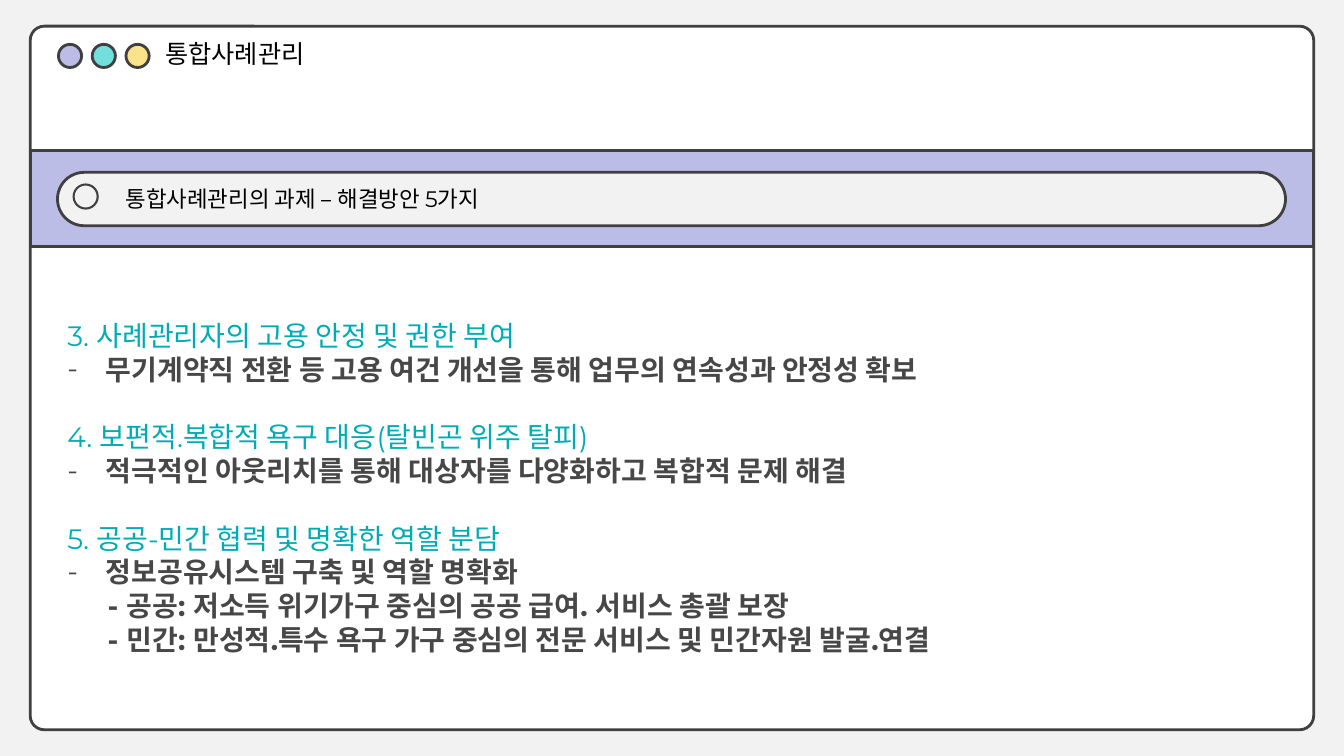
"""Build a browser-window slide about solutions for integrated case management."""

from dataclasses import dataclass
from typing import Any

import lxml.etree
import pptx
import pptx.dml.color
import pptx.enum.shapes
import pptx.enum.text
import pptx.oxml.ns
import pptx.util

Inches = pptx.util.Inches
Pt = pptx.util.Pt
Preset = pptx.enum.shapes.MSO_SHAPE

FONT = "Montserrat"
COLOURS = {
    "background": "F2F2F2",
    "window": "FFFFFF",
    "outline": "404040",
    "lavender": "BCBDE6",
    "turquoise": "73DFDC",
    "yellow": "FCE38A",
    "black": "000000",
    "heading": "00ACB4",
    "detail": "474747",
}


@dataclass(frozen=True)
class Box:
    """Position and size in inches."""

    left: float
    top: float
    width: float
    height: float

    def lengths(self) -> tuple[int, ...]:
        """Return the four values as lengths."""
        return tuple(Inches(v) for v in (self.left, self.top, self.width, self.height))


@dataclass(frozen=True)
class Panel:
    """A filled preset shape with an outline."""

    preset: Any
    box: Box
    fill: str
    corner: float | None = None
    outlined: bool = True


@dataclass(frozen=True)
class Style:
    """Look of one kind of body paragraph."""

    colour: str
    bold: bool
    margin: float = 0
    bullet: bool = False


HEADING = Style("heading", False)
POINT = Style("detail", True, 0.38, True)
SUBPOINT = Style("detail", True, 0.4)

WINDOW_PANELS = [
    Panel(Preset.ROUNDED_RECTANGLE, Box(0.3, 0.26, 12.73, 6.98), "window", 0.02),
    Panel(Preset.RECTANGLE, Box(0.3, 1.49, 12.73, 0.96), "lavender"),
    Panel(Preset.ROUNDED_RECTANGLE, Box(0.57, 1.71, 12.18, 0.53), "background", 0.5),
]
WINDOW_BUTTONS = [
    Panel(Preset.OVAL, Box(0.58 + 0.335 * index, 0.44, 0.23, 0.23), fill)
    for index, fill in enumerate(("lavender", "turquoise", "yellow"))
]
LENS = Panel(Preset.DONUT, Box(0.72, 1.82, 0.26, 0.26), "outline", 0.08, False)
HANDLE = [
    (1, 2.12), (0.97, 2.11), (0.93, 2.07), (0.93, 2.06), (0.94, 2.06),
    (0.99, 2.1), (1, 2.11), (1.01, 2.1), (1.01, 2.08), (0.97, 2.04),
    (0.97, 2.03), (0.98, 2.03), (1.02, 2.07), (1.03, 2.09), (1.02, 2.11),
]
SOLUTIONS = [
    (HEADING, "3. 사례관리자의 고용 안정 및 권한 부여"),
    (POINT, "무기계약직 전환 등 고용 여건 개선을 통해 업무의 연속성과 안정성 확보"),
    (HEADING, "4. 보편적.복합적 욕구 대응(탈빈곤 위주 탈피)"),
    (POINT, "적극적인 아웃리치를 통해 대상자를 다양화하고 복합적 문제 해결"),
    (HEADING, "5. 공공-민간 협력 및 명확한 역할 분담"),
    (POINT, "정보공유시스템 구축 및 역할 명확화"),
    (SUBPOINT, "- 공공: 저소득 위기가구 중심의 공공 급여. 서비스 총괄 보장"),
    (SUBPOINT, "- 민간: 만성적.특수 욕구 가구 중심의 전문 서비스 및 민간자원 발굴.연결"),
]


def colour(name: str) -> pptx.dml.color.RGBColor:
    """Look up a named colour."""
    return pptx.dml.color.RGBColor.from_string(COLOURS[name])


def paint(shape: Any, fill: str, outlined: bool) -> None:
    """Set fill, outline and shadow of a shape."""
    shape.shadow.inherit = False
    shape.fill.solid()
    shape.fill.fore_color.rgb = colour(fill)
    if outlined:
        shape.line.color.rgb = colour("outline")
        shape.line.width = Pt(2)
    else:
        shape.line.fill.background()


def draw_panel(shapes: Any, panel: Panel) -> None:
    """Add one panel to a shape collection."""
    shape = shapes.add_shape(panel.preset, *panel.box.lengths())
    if panel.corner is not None:
        shape.adjustments[0] = panel.corner
    paint(shape, panel.fill, panel.outlined)


def draw_magnifier(shapes: Any) -> None:
    """Add the search symbol."""
    draw_panel(shapes, LENS)
    builder = shapes.build_freeform(*HANDLE[0], scale=float(Inches(1)))
    builder.add_line_segments(HANDLE[1:], close=True)
    paint(builder.convert_to_shape(), "outline", False)


def format_runs(paragraph: Any, size: float, colour_name: str, bold: bool = False) -> None:
    """Format every run of a paragraph."""
    for run in paragraph.runs:
        run.font.name = FONT
        run.font.size = Pt(size)
        run.font.bold = bold
        run.font.color.rgb = colour(colour_name)


def prepare_frame(text_frame: Any) -> None:
    """Make a frame wrap from its top left corner."""
    text_frame.word_wrap = True
    text_frame.vertical_anchor = pptx.enum.text.MSO_ANCHOR.TOP
    text_frame.auto_size = pptx.enum.text.MSO_AUTO_SIZE.SHAPE_TO_FIT_TEXT


def write_line(shape: Any, text: str, size: float) -> None:
    """Write one black line of text into a shape."""
    prepare_frame(shape.text_frame)
    shape.text_frame.text = text
    paragraph = shape.text_frame.paragraphs[0]
    paragraph.alignment = pptx.enum.text.PP_ALIGN.LEFT
    paragraph.line_spacing = 1.0
    paragraph.space_before = Pt(0)
    format_runs(paragraph, size, "black")


def indent(paragraph: Any, style: Style) -> None:
    """Apply the margin and dash bullet of a style."""
    properties = paragraph._p.get_or_add_pPr()
    properties.set("marL", str(Inches(style.margin)))
    if style.bullet:
        properties.set("indent", str(-Inches(style.margin)))
        for tag, key, value in (("a:buFont", "typeface", FONT), ("a:buChar", "char", "-")):
            element = lxml.etree.SubElement(properties, pptx.oxml.ns.qn(tag))
            element.set(key, value)


def write_solutions(shape: Any) -> None:
    """Write the numbered solutions and their details."""
    frame = shape.text_frame
    prepare_frame(frame)
    frame.text = "\n".join(text for _, text in SOLUTIONS)
    for index, (paragraph, (style, _)) in enumerate(zip(frame.paragraphs, SOLUTIONS)):
        indent(paragraph, style)
        if style is HEADING and index:
            paragraph.space_before = Pt(24.4)
        format_runs(paragraph, 20, style.colour, style.bold)


def main() -> None:
    """Build and save the presentation."""
    presentation = pptx.Presentation()
    presentation.slide_width, presentation.slide_height = Inches(13.33), Inches(7.5)
    slide = presentation.slides.add_slide(presentation.slide_layouts.get_by_name("Title Only"))
    slide.background.fill.solid()
    slide.background.fill.fore_color.rgb = colour("background")
    for panel in WINDOW_PANELS:
        draw_panel(slide.shapes, panel)
    buttons = slide.shapes.add_group_shape()
    for button in WINDOW_BUTTONS:
        draw_panel(buttons.shapes, button)
    draw_magnifier(slide.shapes.add_group_shape().shapes)
    search = slide.shapes.add_textbox(*Box(1.15, 1.79, 10.27, 0.37).lengths())
    write_line(search, "통합사례관리의 과제 – 해결방안 5가지", 16)
    write_solutions(slide.shapes.add_textbox(*Box(0.57, 3.11, 11.73, 3.47).lengths()))
    title = slide.shapes.title
    title.left, title.top, title.width, title.height = Box(1.54, 0.33, 3.73, 0.39).lengths()
    write_line(title, "통합사례관리", 18)
    title.element.getparent().append(title.element)
    presentation.save("out.pptx")


if __name__ == "__main__":
    main()
